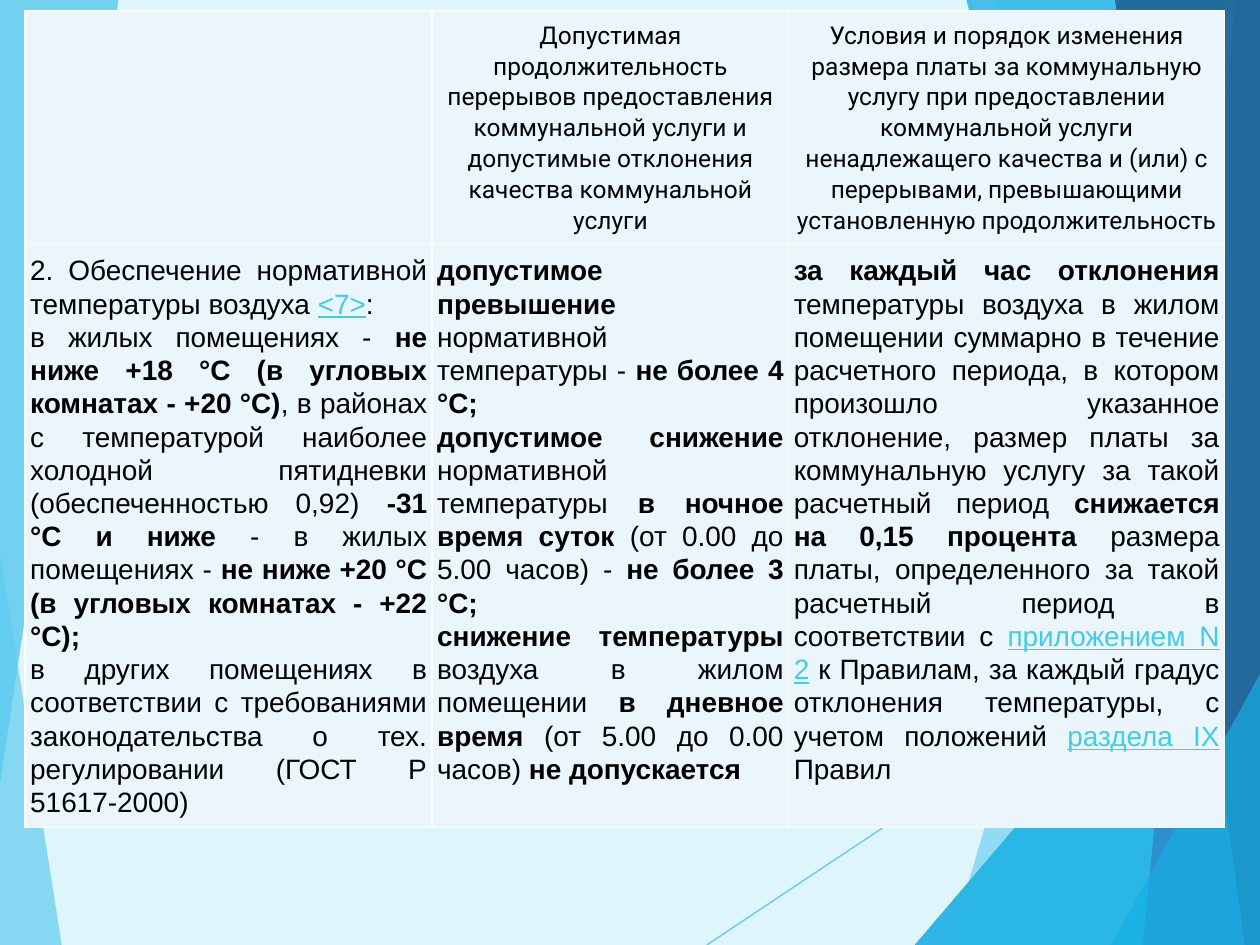
from dataclasses import dataclass

from lxml.etree import SubElement
from pptx import Presentation
from pptx.dml.color import RGBColor as Rgb
from pptx.enum.text import PP_ALIGN as Align
from pptx.oxml.ns import qn
from pptx.util import Inches, Pt


@dataclass(frozen=True)
class Theme:
    background: str = "DFF5FC"
    sky: str = "5FCBEF"
    cyan: str = "17B0E4"
    blue: str = "2E83C3"
    navy: str = "226292"
    cell: str = "EAF6FC"
    border: str = "FFFFFF"
    text: str = "000000"
    link: str = "3FCDE7"
    head_font: str = "Roboto"
    body_font: str = "Arial"
    head_size: int = 14
    body_size: int = 16
    spacing: float = 1.07
    hairline: float = 0.75
    border_width: int = 1


THEME = Theme()
WIDTH, HEIGHT = Inches(10), Inches(7.5)

# Background geometry, in percent of the slide's width and height
LINES = [((56.1, 100), (100, 61)), ((77, 0), (90.4, 100))]
RIGHT_EDGE = [(100, 100), (100, 0)]
FACETS = [
    ([(97.5, 0), (75.4, 100), *RIGHT_EDGE], THEME.sky, 36),
    ([(78.8, 0), (91.9, 100), *RIGHT_EDGE], THEME.sky, 20),
    ([(72.6, 100), (100, 57.2), (100, 100)], THEME.cyan, 66),
    ([(76.7, 0), (97, 100), *RIGHT_EDGE], THEME.cyan, 50),
    ([(98.1, 0), (90.7, 100), *RIGHT_EDGE], THEME.blue, 70),
    ([(88.5, 0), (98.8, 100), *RIGHT_EDGE], THEME.navy, 82),
    ([(88.2, 100), (100, 71.3), (100, 100)], THEME.cyan, 66),
]
LEFT_SLIVER = ([(0, 58.5), (4.9, 100), (0, 100)], THEME.sky, 70)
LEFT_CORNER = ([(0, 0), (9.4, 0), (0, 82.9)], THEME.sky, 85)

# Table geometry, in percent; cell margins in inches
TABLE_LEFT, TABLE_TOP = 2, 1.1
COLUMNS = [32.3, 28.3, 34.6]
ROWS = [22.7, 57.7]
MARGIN_X, MARGIN_Y = Inches(0.04), Inches(0.07)

# Text: * switches bold on and off, _ switches link style on and off
HEADINGS = [
    [],
    ["Допустимая продолжительность перерывов предоставления коммунальной услуги "
     "и допустимые отклонения качества коммунальной услуги"],
    ["Условия и порядок изменения размера платы за коммунальную услугу при "
     "предоставлении коммунальной услуги ненадлежащего качества и (или) с "
     "перерывами, превышающими установленную продолжительность"],
]
BODY = [
    ["2. Обеспечение нормативной температуры воздуха _<7>_:",
     "в жилых помещениях - *не ниже +18 °C (в угловых комнатах - +20 °C)*, в районах "
     "с температурой наиболее холодной пятидневки (обеспеченностью 0,92) *-31 °C и "
     "ниже* - в жилых помещениях - *не ниже +20 °C (в угловых комнатах - +22 °C);*",
     "в других помещениях в соответствии с требованиями законодательства о тех. "
     "регулировании (ГОСТ Р 51617-2000)"],
    ["*допустимое превышение *нормативной температуры - *не более 4 °C;*",
     "*допустимое снижение *нормативной температуры *в ночное время суток* "
     "(от 0.00 до 5.00 часов) - *не более 3 °C;*",
     "*снижение температуры *воздуха в жилом помещении *в дневное время *"
     "(от 5.00 до 0.00 часов) *не допускается*"],
    ["*за каждый час отклонения *температуры воздуха в жилом помещении суммарно в "
     "течение расчетного периода, в котором произошло указанное отклонение, размер "
     "платы за коммунальную услугу за такой расчетный период *снижается на 0,15 "
     "процента* размера платы, определенного за такой расчетный период в "
     "соответствии с _приложением N 2_ к Правилам, за каждый градус отклонения "
     "температуры, с учетом положений _раздела IX_ Правил"],
]


def across(percent):
    return round(WIDTH * percent / 100)


def down(percent):
    return round(HEIGHT * percent / 100)


def place(point):
    return across(point[0]), down(point[1])


def set_opacity(shape, percent):
    for color in shape._element.iter(qn("a:srgbClr")):
        SubElement(color, qn("a:alpha"), val=str(percent * 1000))


def add_facet(page, points, color, opacity):
    start, *others = map(place, points)
    builder = page.shapes.build_freeform(*start)
    builder.add_line_segments(others, close=True)
    facet = builder.convert_to_shape()
    facet.shadow.inherit = False
    facet.fill.solid()
    facet.fill.fore_color.rgb = Rgb.from_string(color)
    facet.line.fill.background()
    set_opacity(facet, opacity)


def add_hairline(page, start, end):
    line = page.shapes.add_connector(1, *place(start), *place(end))
    line.line.color.rgb = Rgb.from_string(THEME.sky)
    line.line.width = Pt(THEME.hairline)
    SubElement(line._element.spPr, qn("a:effectLst"))
    set_opacity(line, 70)


def add_background(page):
    page.background.fill.solid()
    page.background.fill.fore_color.rgb = Rgb.from_string(THEME.background)
    add_facet(page, *LEFT_SLIVER)
    # Two layers of the same translucent facets give the full depth of colour
    for _ in range(2):
        for start, end in LINES:
            add_hairline(page, start, end)
        for facet in FACETS:
            add_facet(page, *facet)
    add_facet(page, *LEFT_CORNER)


def style_cell(cell):
    cell.margin_left = cell.margin_right = MARGIN_X
    cell.margin_top = cell.margin_bottom = MARGIN_Y
    properties = cell._tc.get_or_add_tcPr()
    for side in "LRTB":
        edge = SubElement(properties, qn(f"a:ln{side}"), w=str(Pt(THEME.border_width)))
        paint = SubElement(edge, qn("a:solidFill"))
        SubElement(paint, qn("a:srgbClr"), val=THEME.border)
    cell.fill.solid()
    cell.fill.fore_color.rgb = Rgb.from_string(THEME.cell)


def write_spans(para, marked_text):
    for i, part in enumerate(marked_text.split("*")):
        for j, words in enumerate(part.split("_")):
            if not words:
                continue
            span = para.add_run()
            span.text = words
            if i % 2:
                span.font.bold = True
            if j % 2:
                span.font.underline = True
            color = THEME.link if j % 2 else THEME.text
            span.font.color.rgb = Rgb.from_string(color)


def write_cell(cell, texts, font, size, align):
    frame = cell.text_frame
    for index, text in enumerate(texts):
        para = frame.add_paragraph() if index else frame.paragraphs[0]
        para.alignment = align
        para.line_spacing = THEME.spacing
        para.font.name = font
        para.font.size = Pt(size)
        para.font.bold = False
        write_spans(para, text)


def add_rules_table(page):
    frame = page.shapes.add_table(
        len(ROWS), len(COLUMNS), across(TABLE_LEFT), down(TABLE_TOP),
        across(sum(COLUMNS)), down(sum(ROWS)))
    table = frame.table
    table.first_row = table.horz_banding = False
    for column, share in zip(table.columns, COLUMNS):
        column.width = across(share)
    for row, share in zip(table.rows, ROWS):
        row.height = down(share)
    row_styles = [
        (HEADINGS, THEME.head_font, THEME.head_size, Align.CENTER),
        (BODY, THEME.body_font, THEME.body_size, Align.JUSTIFY),
    ]
    for row, (contents, *style) in zip(table.rows, row_styles):
        for cell, texts in zip(row.cells, contents):
            style_cell(cell)
            write_cell(cell, texts, *style)


def main():
    deck = Presentation()
    deck.slide_width, deck.slide_height = WIDTH, HEIGHT
    page = deck.slides.add_slide(deck.slide_layouts[6])
    add_background(page)
    add_rules_table(page)
    deck.save("out.pptx")


if __name__ == "__main__":
    main()
